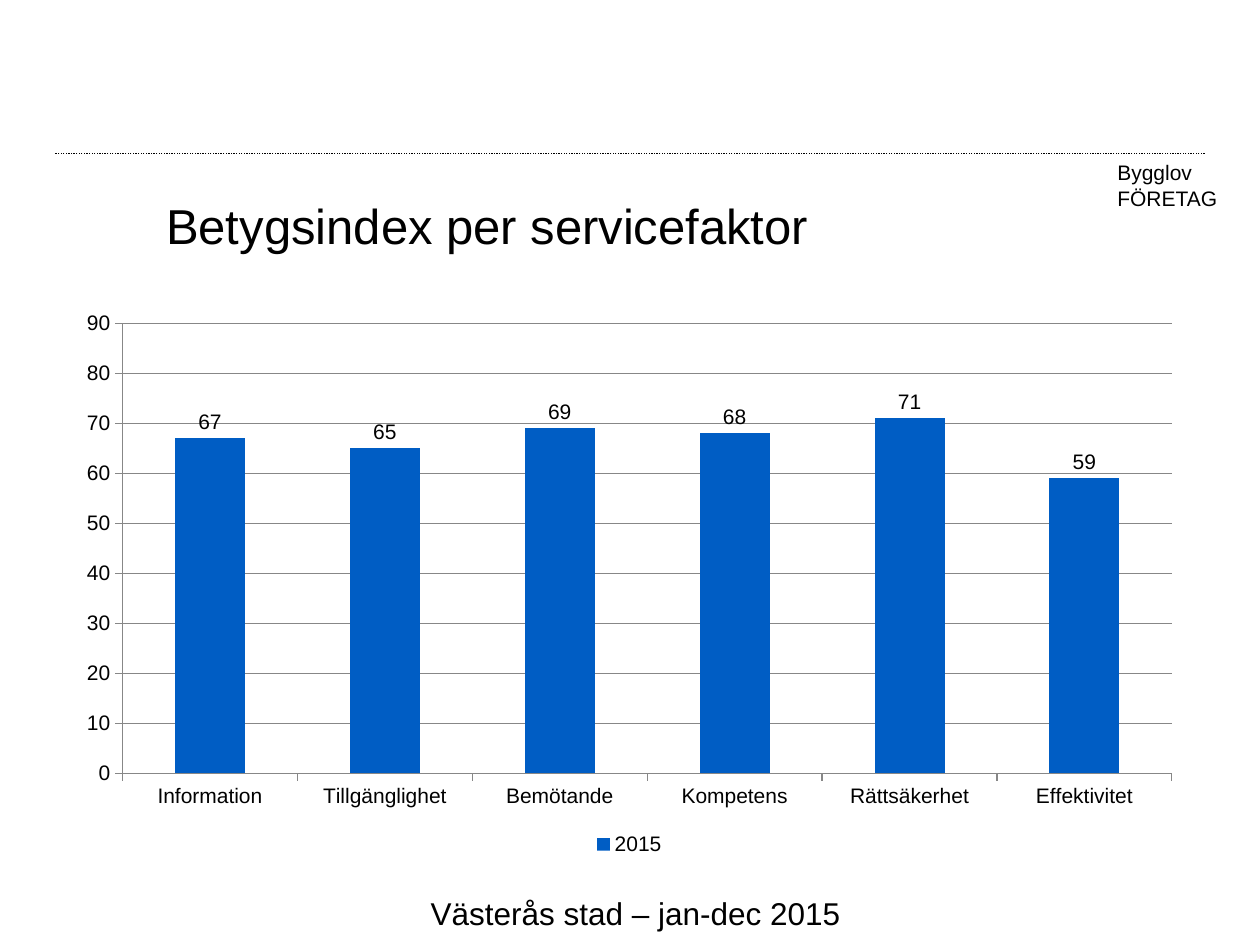
from lxml.etree import SubElement
from pptx import Presentation
from pptx.chart.data import CategoryChartData
from pptx.dml.color import RGBColor
from pptx.enum.chart import XL_CHART_TYPE, XL_LABEL_POSITION, XL_LEGEND_POSITION, XL_TICK_MARK
from pptx.enum.dml import MSO_LINE
from pptx.enum.shapes import MSO_CONNECTOR
from pptx.enum.text import MSO_ANCHOR
from pptx.oxml.ns import qn
from pptx.util import Inches, Pt

BLACK = RGBColor(0x00, 0x00, 0x00)
BLUE = RGBColor(0x00, 0x5D, 0xC4)
GREY = RGBColor(0x87, 0x87, 0x87)


def apply(target, values):
    for attribute, value in values.items():
        setattr(target, attribute, value)


class IndexSlide:
    """Holds the style and the current slide, and adds each kind of element."""

    def __init__(self, presentation):
        self.slide = presentation.slides.add_slide(presentation.slide_layouts[6])
        self.font = "Arial"

    def style(self, font, size):
        apply(font, {"name": self.font, "size": Pt(size), "bold": False})
        font.color.rgb = BLACK

    def text(self, box, lines, size, wrap=False, anchor=MSO_ANCHOR.TOP):
        frame = self.slide.shapes.add_textbox(*map(Inches, box)).text_frame
        apply(frame, {"word_wrap": wrap, "vertical_anchor": anchor, "text": "\n".join(lines)})
        for paragraph in frame.paragraphs:
            self.style(paragraph.font, size)

    def dotted_rule(self, *ends):
        rule = self.slide.shapes.add_connector(MSO_CONNECTOR.STRAIGHT, *map(Inches, ends))
        apply(rule.line, {"width": Pt(0.75), "dash_style": MSO_LINE.ROUND_DOT})
        rule.line.color.rgb = BLACK
        SubElement(rule._element.spPr, qn("a:effectLst"))

    def column_chart(self, box, categories, name, values):
        data = CategoryChartData(number_format="0")
        data.categories = categories
        data.add_series(name, values)
        chart = self.slide.shapes.add_chart(
            XL_CHART_TYPE.COLUMN_CLUSTERED, *map(Inches, box), data).chart
        self.style(chart.font, 12)
        apply(chart, {"has_title": False, "has_legend": True})
        apply(chart.legend, {"position": XL_LEGEND_POSITION.BOTTOM, "include_in_layout": False})
        self.style(chart.legend.font, 12)

        for axis in (chart.category_axis, chart.value_axis):
            apply(axis, {"major_tick_mark": XL_TICK_MARK.OUTSIDE,
                         "minor_tick_mark": XL_TICK_MARK.NONE})
            axis.format.line.color.rgb = GREY
            self.style(axis.tick_labels.font, 12)
        apply(chart.value_axis, {"minimum_scale": 0, "maximum_scale": 90, "major_unit": 10,
                                 "has_major_gridlines": True})
        chart.value_axis.major_gridlines.format.line.color.rgb = GREY
        apply(chart.value_axis.tick_labels, {"number_format": "0", "number_format_is_linked": False})

        plot = chart.plots[0]
        apply(plot, {"gap_width": 150, "vary_by_categories": False, "has_data_labels": True})
        apply(plot.data_labels, {"show_value": True, "position": XL_LABEL_POSITION.OUTSIDE_END,
                                 "number_format": "0", "number_format_is_linked": False})
        self.style(plot.data_labels.font, 12)
        columns = plot.series[0].format.fill
        columns.solid()
        columns.fore_color.rgb = BLUE


def main():
    presentation = Presentation()
    apply(presentation, {"slide_width": Inches(10), "slide_height": Inches(7.5)})
    page = IndexSlide(presentation)
    page.dotted_rule(9.56, 1.22, 0.44, 1.22)
    page.text((3.32, 7.05, 3.48, 0.4), ["Västerås stad – jan-dec 2015"], 18)
    ratings = {"Information": 67, "Tillgänglighet": 65, "Bemötande": 69,
               "Kompetens": 68, "Rättsäkerhet": 71, "Effektivitet": 59}
    page.column_chart((0.51, 2.39, 8.97, 4.44), list(ratings), "2015", list(ratings.values()))
    page.text((1.22, 1.55, 8.35, 0.47), ["Betygsindex per servicefaktor"], 28,
              wrap=True, anchor=MSO_ANCHOR.MIDDLE)
    page.text((8.77, 1.22, 1, 0.5), ["Bygglov", "FÖRETAG"], 12)
    presentation.save("out.pptx")


if __name__ == "__main__":
    main()
